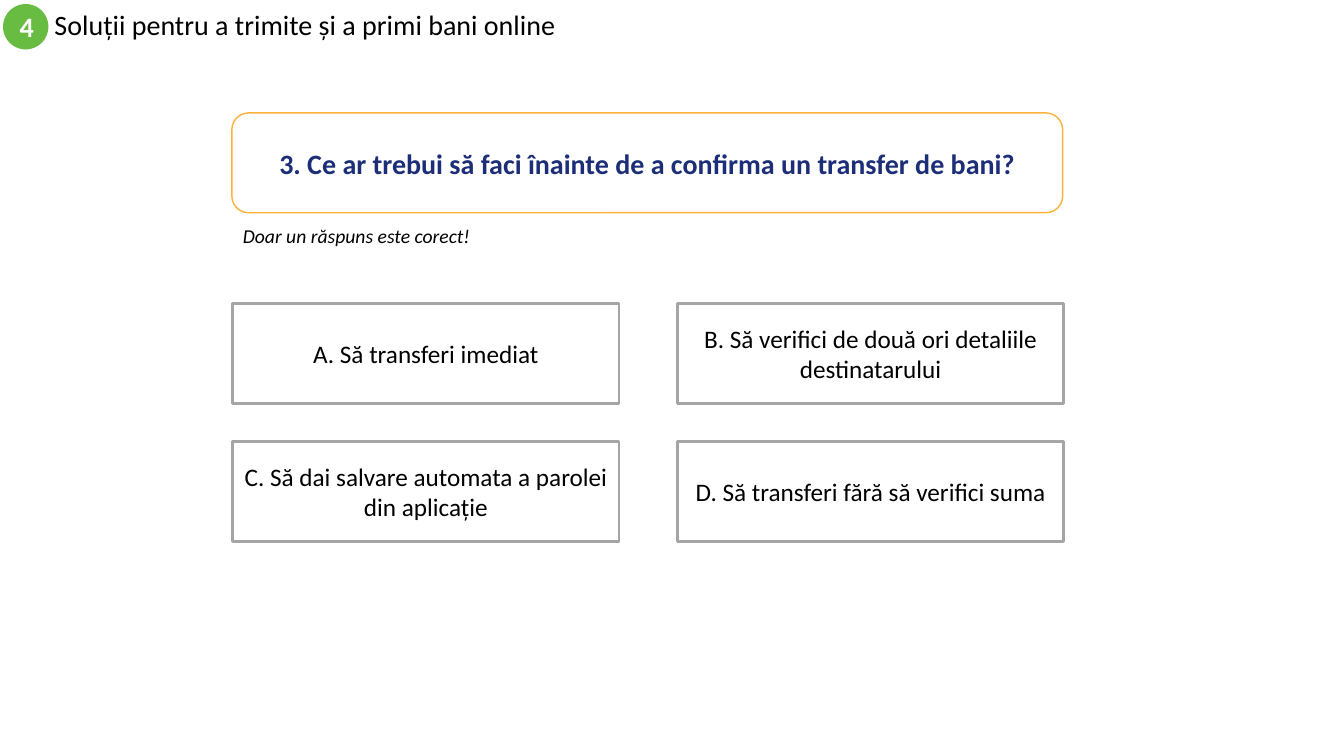
from pptx import Presentation
from pptx.dml.color import RGBColor
from pptx.enum.shapes import MSO_SHAPE as Kind
from pptx.enum.text import MSO_ANCHOR, MSO_AUTO_SIZE, PP_ALIGN
from pptx.util import Inches, Pt

# Content
NUMBER = "4"
TITLE = "Soluții pentru a trimite și a primi bani online"
QUESTION = "3. Ce ar trebui să faci înainte de a confirma un transfer de bani?"
HINT = "Doar un răspuns este corect!"
ANSWERS = [
    "A. Să transferi imediat",
    "B. Să verifici de două ori detaliile destinatarului",
    "C. Să dai salvare automata a parolei din aplicație",
    "D. Să transferi fără să verifici suma",
]

# Style
FONT = "Calibri"
BLACK = RGBColor(0x00, 0x00, 0x00)
WHITE = RGBColor(0xFF, 0xFF, 0xFF)
GREEN = RGBColor(0x68, 0xBC, 0x42)
AMBER = RGBColor(0xFC, 0xB1, 0x3A)
NAVY = RGBColor(0x1C, 0x2E, 0x78)
GREY = RGBColor(0xA5, 0xA5, 0xA5)

# Answer grid, in inches
LEFT, TOP = 2.31, 3.01
WIDTH, HEIGHT = 3.83, 0.99
STEP_X, STEP_Y = 4.41, 1.37
COLS = 2


def write(shape, words, size, color=BLACK, bold=False, italic=False,
          align=PP_ALIGN.LEFT, anchor=MSO_ANCHOR.MIDDLE):
    frame = shape.text_frame
    frame.word_wrap = True
    frame.auto_size = MSO_AUTO_SIZE.NONE
    frame.vertical_anchor = anchor
    para = frame.paragraphs[0]
    para.alignment = align
    run = para.add_run()
    run.text = words
    font = run.font
    font.name, font.size = FONT, Pt(size)
    font.bold, font.italic = bold, italic
    font.color.rgb = color
    return para


def add_box(slide, kind, box, fill, line=None, weight=0):
    shape = slide.shapes.add_shape(kind, *map(Inches, box))
    shape.shadow.inherit = False
    shape.fill.solid()
    shape.fill.fore_color.rgb = fill
    if line is None:
        shape.line.fill.background()
    else:
        shape.line.color.rgb = line
        shape.line.width = Pt(weight)
    return shape


def main():
    deck = Presentation()
    deck.slide_width, deck.slide_height = Inches(13.33), Inches(7.5)
    slide = deck.slides.add_slide(deck.slide_layouts[5])

    # Heading with its number
    title = slide.shapes.title
    title.left, title.top = Inches(0.44), Inches(0.04)
    title.width, title.height = Inches(8), Inches(0.45)
    write(title, TITLE, 20).line_spacing = 0.9
    badge = add_box(slide, Kind.OVAL, (0.03, 0.04, 0.45, 0.45), GREEN)
    write(badge, NUMBER, 20, WHITE, bold=True, align=PP_ALIGN.CENTER)

    # Question and hint
    panel = add_box(slide, Kind.ROUNDED_RECTANGLE, (2.3, 1.12, 8.24, 0.99),
                    WHITE, AMBER, 1)
    write(panel, QUESTION, 20, NAVY, bold=True, align=PP_ALIGN.CENTER)
    hint = slide.shapes.add_textbox(Inches(2.31), Inches(2.17),
                                    Inches(2.85), Inches(0.34))
    write(hint, HINT, 14, italic=True, anchor=MSO_ANCHOR.TOP)

    # Answers, two to a row
    for i, answer in enumerate(ANSWERS):
        row, col = divmod(i, COLS)
        place = (LEFT + col * STEP_X, TOP + row * STEP_Y, WIDTH, HEIGHT)
        card = add_box(slide, Kind.RECTANGLE, place, WHITE, GREY, 2)
        write(card, answer, 18, align=PP_ALIGN.CENTER)

    deck.save("out.pptx")


if __name__ == "__main__":
    main()
